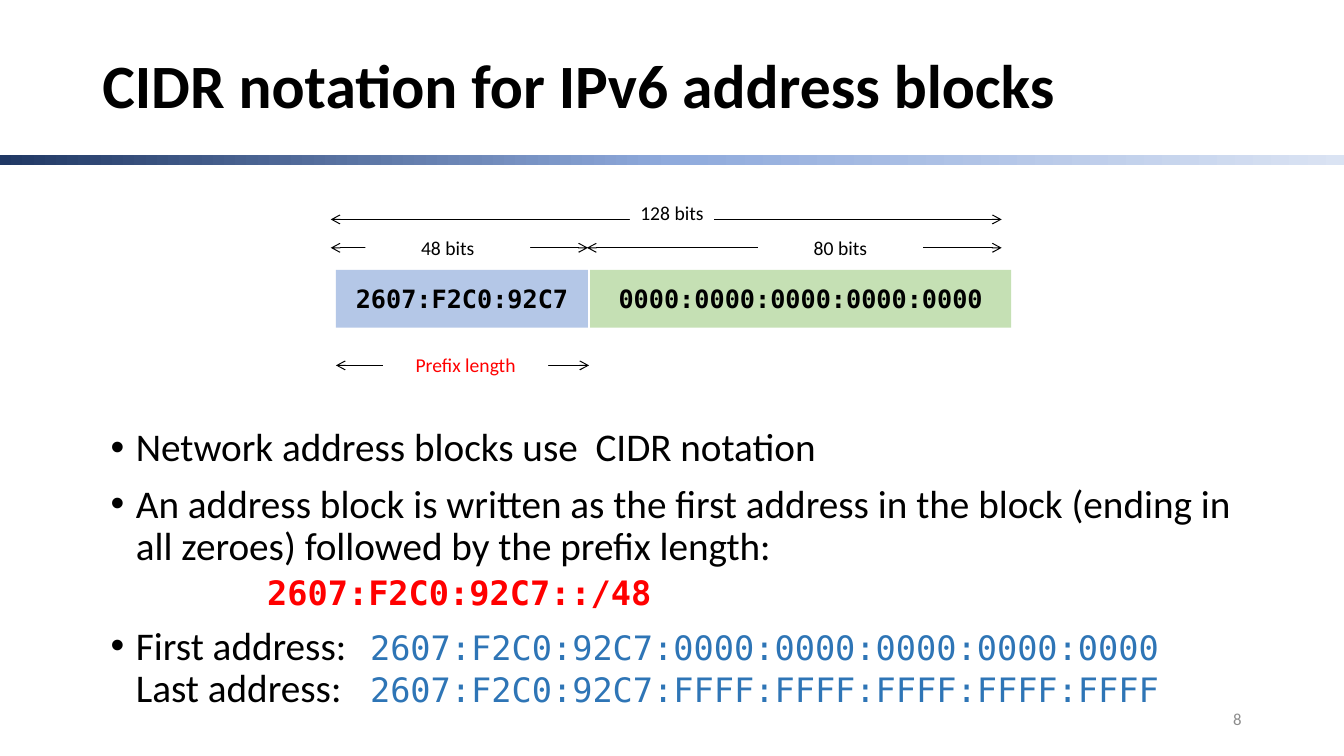
"""Build a slide on CIDR notation for IPv6 address blocks."""
from copy import deepcopy

from lxml import etree
from pptx import Presentation
from pptx.dml.color import RGBColor
from pptx.enum.shapes import MSO_CONNECTOR, MSO_SHAPE
from pptx.enum.text import MSO_ANCHOR, PP_ALIGN
from pptx.oxml.ns import qn
from pptx.util import Pt

PX = 9525
RECTANGLE = MSO_SHAPE.RECTANGLE
STRAIGHT = MSO_CONNECTOR.STRAIGHT
TOP, MIDDLE = MSO_ANCHOR.TOP, MSO_ANCHOR.MIDDLE
LEFT, CENTER, RIGHT = PP_ALIGN.LEFT, PP_ALIGN.CENTER, PP_ALIGN.RIGHT

SANS = "Calibri"
MONO = "DejaVu Sans Mono"

BLACK = RGBColor(0x00, 0x00, 0x00)
WHITE = RGBColor(0xFF, 0xFF, 0xFF)
RED = RGBColor(0xFF, 0x00, 0x00)
GREY = RGBColor(0x8C, 0x8C, 0x8C)
ADDRESS_BLUE = RGBColor(0x2E, 0x75, 0xB6)
PREFIX_BLUE = RGBColor(0xB4, 0xC7, 0xE7)
HOST_GREEN = RGBColor(0xC5, 0xE0, 0xB4)
BAR_COLORS = (
    RGBColor(0x20, 0x38, 0x64),
    RGBColor(0x8F, 0xAA, 0xDC),
    RGBColor(0xDA, 0xE3, 0xF3),
)


def emu(*lengths):
    """Turn px lengths into EMU."""
    return [length * PX for length in lengths]


def add_run(paragraph, text, size, color=BLACK, font=SANS, bold=False):
    """Add one formatted run to a paragraph."""
    run = paragraph.add_run()
    run.text = text
    run.font.size = Pt(size)
    run.font.name = font
    run.font.bold = bold
    run.font.color.rgb = color


def add_text_box(slide, box, anchor=TOP):
    """Add a wrapping text box and return its text frame."""
    frame = slide.shapes.add_textbox(*emu(*box)).text_frame
    frame.word_wrap = True
    frame.vertical_anchor = anchor
    return frame


def add_rectangle(slide, box):
    """Add a rectangle without outline or shadow."""
    shape = slide.shapes.add_shape(RECTANGLE, *emu(*box))
    shape.shadow.inherit = False
    shape.line.fill.background()
    return shape


def add_labelled_rectangle(slide, box, fill, anchor, text, size, **style):
    """Add a filled rectangle with one centred, unwrapped line of text."""
    shape = add_rectangle(slide, box)
    shape.fill.solid()
    shape.fill.fore_color.rgb = fill
    frame = shape.text_frame
    frame.word_wrap = False
    frame.vertical_anchor = anchor
    paragraph = frame.paragraphs[0]
    paragraph.alignment = CENTER
    add_run(paragraph, text, size, **style)


def add_gradient_bar(slide, box):
    """Add the horizontal gradient bar under the title."""
    bar = add_rectangle(slide, box)
    bar.fill.gradient()
    bar.fill.gradient_angle = 0
    stop_list = bar._element.spPr.find(".//" + qn("a:gsLst"))
    stop_list.append(deepcopy(stop_list[0]))
    for index, (stop, color) in enumerate(zip(bar.fill.gradient_stops, BAR_COLORS)):
        stop.position = index / 2
        stop.color.rgb = color


def add_dimension(slide, start, end, y, label_box, text, color=BLACK):
    """Add a double-headed arrow interrupted by its label."""
    arrow = slide.shapes.add_connector(STRAIGHT, *emu(start, y, end, y))
    arrow.line.color.rgb = BLACK
    arrow.line.width = Pt(0.75)
    line = arrow.line._get_or_add_ln()
    for tag in ("a:headEnd", "a:tailEnd"):
        etree.SubElement(line, qn(tag), type="arrow")
    etree.SubElement(arrow._element.spPr, qn("a:effectLst"))
    add_labelled_rectangle(slide, label_box, WHITE, TOP, text, 14, color=color)


def format_paragraph(paragraph, margin, indent, before, bullet=None, tab=None):
    """Set indents, spacing, bullet and tab stop of a body paragraph."""
    paragraph.line_spacing = 0.9
    paragraph.space_before = Pt(before)
    properties = paragraph._p.get_or_add_pPr()
    properties.set("marL", str(margin * PX))
    properties.set("indent", str(indent * PX))
    if bullet:
        etree.SubElement(properties, qn("a:buFont"), typeface="Arial")
        etree.SubElement(properties, qn("a:buChar"), char=bullet)
    if tab:
        tabs = etree.SubElement(properties, qn("a:tabLst"))
        etree.SubElement(tabs, qn("a:tab"), pos=str(tab * PX), algn="l")


def add_bullet(frame, tab=None):
    """Add an empty bulleted paragraph."""
    paragraph = frame.paragraphs[0]
    if paragraph.runs:
        paragraph = frame.add_paragraph()
    format_paragraph(paragraph, 24, -24, 10, "•", tab)
    return paragraph


def add_body(slide):
    """Add the explanation with its example addresses."""
    frame = add_text_box(slide, (96, 403, 1119, 287))
    for text in (
        "Network address blocks use  CIDR notation",
        "An address block is written as the first address in the block "
        "(ending in all zeroes) followed by the prefix length:",
    ):
        add_run(add_bullet(frame), text, 28)

    example = frame.add_paragraph()
    format_paragraph(example, 149, 0, 5)
    add_run(example, "2607:F2C0:92C7::/48", 24, RED, MONO, True)

    address_range = add_bullet(frame, tab=247)
    add_run(address_range, "First address: \t", 28)
    add_run(address_range, "2607:F2C0:92C7:0000:0000:0000:0000:0000", 24, ADDRESS_BLUE, MONO)
    address_range.add_line_break()
    add_run(address_range, "Last address: \t", 28)
    add_run(address_range, "2607:F2C0:92C7:FFFF:FFFF:FFFF:FFFF:FFFF", 24, ADDRESS_BLUE, MONO)


def add_line_of_text(slide, box, alignment, text, size, **style):
    """Add a text box holding one vertically centred line."""
    paragraph = add_text_box(slide, box, MIDDLE).paragraphs[0]
    paragraph.alignment = alignment
    paragraph.line_spacing = 0.9
    add_run(paragraph, text, size, **style)


def main():
    """Build and save the slide."""
    presentation = Presentation()
    presentation.slide_width, presentation.slide_height = emu(1280, 720)
    slide = presentation.slides.add_slide(presentation.slide_layouts[6])

    add_gradient_bar(slide, (0, 148, 1280, 9))
    add_line_of_text(slide, (88, 38, 1104, 93), LEFT,
                     "CIDR notation for IPv6 address blocks", 44, bold=True)

    for left, width, fill, text in (
        (320, 240, PREFIX_BLUE, "2607:F2C0:92C7"),
        (562, 401, HOST_GREEN, "0000:0000:0000:0000:0000"),
    ):
        add_labelled_rectangle(slide, (left, 257, width, 55), fill, MIDDLE,
                               text, 18, font=MONO, bold=True)

    add_dimension(slide, 315, 954, 209, (600, 187, 80, 33), "128 bits")
    add_dimension(slide, 315, 560, 236, (348, 220, 157, 33), "48 bits")
    add_dimension(slide, 559, 954, 236, (722, 220, 157, 33), "80 bits")
    add_dimension(slide, 320, 561, 348, (365, 331, 157, 33), "Prefix length", RED)

    add_body(slide)
    add_line_of_text(slide, (904, 667, 288, 38), RIGHT, "8", 12, color=GREY)
    presentation.save("out.pptx")


if __name__ == "__main__":
    main()
